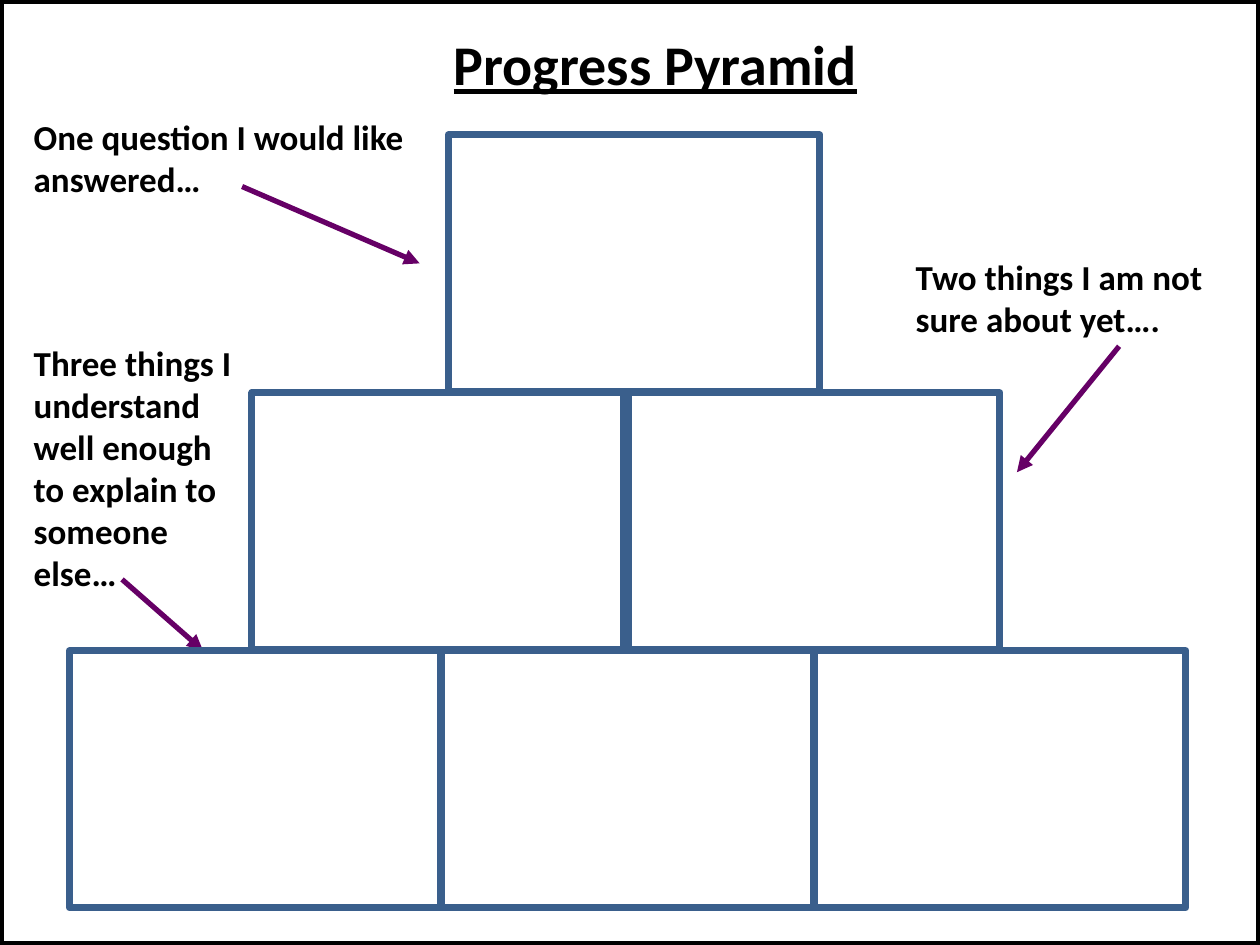
from dataclasses import dataclass

from lxml.etree import SubElement
from pptx import Presentation
from pptx.dml.color import RGBColor
from pptx.enum.shapes import MSO_CONNECTOR, MSO_SHAPE
from pptx.enum.text import MSO_AUTO_SIZE, PP_ALIGN
from pptx.oxml.ns import qn
from pptx.slide import Slide
from pptx.util import Cm, Pt

FONT = "Calibri"
BLACK = "000000"
PURPLE = "660066"
BLUE = "3A5F8C"
PAGE_WIDTH, PAGE_HEIGHT = 25.4, 19.05
BLOCK_WIDTH, BLOCK_HEIGHT = 7.49, 5.18
PYRAMID_TOP, ROW_PITCH = 2.72, 5.2


@dataclass
class Arrow:
    start_x: float
    start_y: float
    end_x: float
    end_y: float


@dataclass
class Label:
    text: str
    left: float
    top: float
    width: float
    height: float
    size: int = 20
    underline: bool = False
    align: PP_ALIGN = PP_ALIGN.LEFT


@dataclass
class PyramidRow:
    left: float
    count: int
    pitch: float


ARROWS = [
    Arrow(4.88, 3.76, 8.46, 5.31),
    Arrow(22.56, 6.98, 20.5, 9.52),
    Arrow(2.46, 11.68, 4.09, 13.11),
]
PROMPTS = [
    Label("One question I would like answered…", 0.43, 2.21, 8.15, 1.96),
    Label("Two things I am not sure about yet….", 18.21, 5.03, 6.71, 1.96),
    Label("Three things I understand well enough to explain to someone else…",
          0.43, 6.76, 4.72, 5.38),
]
TITLE = Label("Progress Pyramid", 7.29, 0.48, 11.84, 1.63, 32, True, PP_ALIGN.CENTER)
ROWS = [
    PyramidRow(9.04, 1, 0),
    PyramidRow(5.08, 2, 7.59),
    PyramidRow(1.4, 3, 7.51),
]


def color(value: str) -> RGBColor:
    return RGBColor.from_string(value)


def draw_arrow(page: Slide, arrow: Arrow) -> None:
    connector = page.shapes.add_connector(
        MSO_CONNECTOR.STRAIGHT, Cm(arrow.start_x), Cm(arrow.start_y),
        Cm(arrow.end_x), Cm(arrow.end_y))
    connector.line.color.rgb = color(PURPLE)
    connector.line.width = Pt(3)
    SubElement(connector.line._get_or_add_ln(), qn("a:tailEnd"), type="triangle")
    SubElement(connector._element.spPr, qn("a:effectLst"))


def draw_label(page: Slide, label: Label) -> None:
    box = page.shapes.add_textbox(
        Cm(label.left), Cm(label.top), Cm(label.width), Cm(label.height))
    frame = box.text_frame
    frame.word_wrap = True
    frame.auto_size = MSO_AUTO_SIZE.SHAPE_TO_FIT_TEXT
    frame.text = label.text
    para = frame.paragraphs[0]
    para.alignment = label.align
    font = para.runs[0].font
    font.name = FONT
    font.size = Pt(label.size)
    font.bold = True
    font.underline = label.underline
    font.color.rgb = color(BLACK)


def draw_outline(page: Slide, left: float, top: float, width: float,
                 height: float, line_color: str, line_width: float) -> None:
    box = page.shapes.add_shape(
        MSO_SHAPE.RECTANGLE, Cm(left), Cm(top), Cm(width), Cm(height))
    box.shadow.inherit = False
    box.fill.background()
    box.line.color.rgb = color(line_color)
    box.line.width = Pt(line_width)


def draw_pyramid(page: Slide) -> None:
    for level, row in enumerate(ROWS):
        for column in range(row.count):
            draw_outline(page, row.left + column * row.pitch,
                         PYRAMID_TOP + level * ROW_PITCH,
                         BLOCK_WIDTH, BLOCK_HEIGHT, BLUE, 4)


def main() -> None:
    deck = Presentation()
    deck.slide_width = Cm(PAGE_WIDTH)
    deck.slide_height = Cm(PAGE_HEIGHT)
    page = deck.slides.add_slide(deck.slide_layouts[6])
    for arrow in ARROWS:
        draw_arrow(page, arrow)
    for prompt in PROMPTS:
        draw_label(page, prompt)
    draw_pyramid(page)
    draw_outline(page, 0, 0, PAGE_WIDTH, PAGE_HEIGHT, BLACK, 5)
    draw_label(page, TITLE)
    deck.save("out.pptx")


if __name__ == "__main__":
    main()
